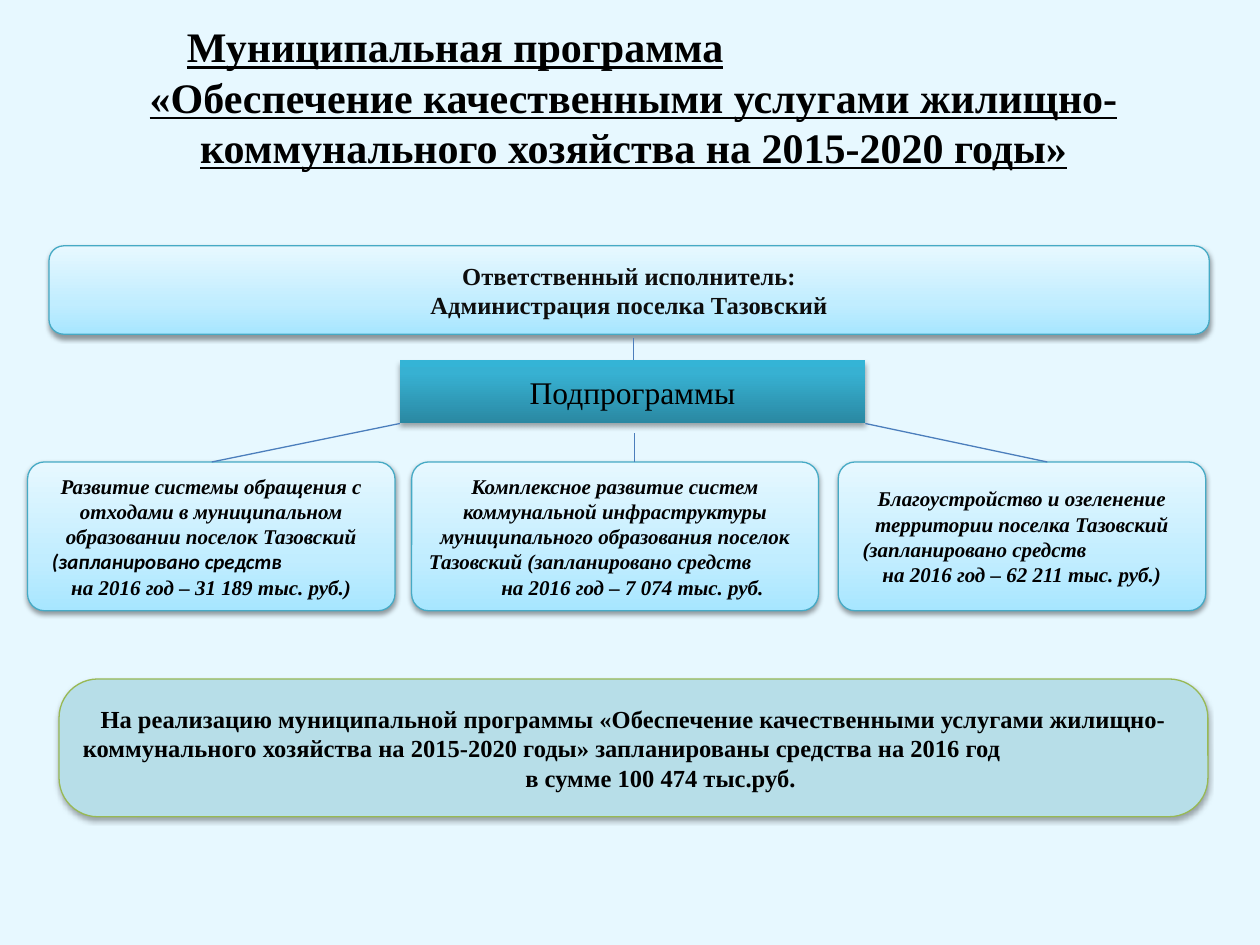
from copy import deepcopy
from dataclasses import dataclass

from lxml import etree
from pptx import Presentation
from pptx.dml.color import RGBColor
from pptx.enum.shapes import MSO_CONNECTOR, MSO_SHAPE
from pptx.enum.text import MSO_ANCHOR, MSO_AUTO_SIZE, PP_ALIGN
from pptx.oxml.ns import qn
from pptx.util import Pt

ROUNDED = MSO_SHAPE.ROUNDED_RECTANGLE
STRAIGHT = MSO_CONNECTOR.STRAIGHT
MIDDLE = MSO_ANCHOR.MIDDLE
NO_AUTOFIT = MSO_AUTO_SIZE.NONE
LEFT, CENTER = PP_ALIGN.LEFT, PP_ALIGN.CENTER

SERIF, SANS = "Times New Roman", "Calibri"
COLORS = {
    "background": "E7F8FF",
    "black": "000000",
    "executor text": "0D0D0D",
    "box line": "46AAC5",
    "connector": "4B7EBC",
    "total fill": "B7DEE8",
    "total line": "98B955",
}
PALE_GRADIENT = ((0, "A7E6FF"), (0.35, "C1EDFF"), (1, "E7F8FF"))
TEAL_GRADIENT = ((0, "2A88A2"), (0.8, "37B1D2"), (1, "34B4D6"))


@dataclass
class Line:
    text: str
    align: PP_ALIGN = CENTER
    indent: float = 0
    font: str = SERIF
    tab: float = 0


@dataclass
class Style:
    size: float
    color: str = COLORS["black"]
    bold: bool = True
    italic: bool = False
    underline: bool = False


@dataclass
class Box:
    left: float
    top: float
    width: float
    height: float
    lines: list[Line]
    style: Style
    corner: float = 0.167
    gradient: tuple = PALE_GRADIENT
    fill: str = ""
    border: str = COLORS["box line"]
    shadow_opacity: int = 38
    shadow_distance: float = 1.6


def write_lines(frame, lines: list[Line], style: Style) -> None:
    frame.word_wrap = True
    frame.auto_size = NO_AUTOFIT
    frame.vertical_anchor = MIDDLE
    for index, line in enumerate(lines):
        paragraph = frame.paragraphs[0] if index == 0 else frame.add_paragraph()
        paragraph.text = line.text
        paragraph.alignment = line.align
        properties = paragraph._p.get_or_add_pPr()
        properties.set("marL", str(Pt(line.indent)))
        properties.set("indent", "0")
        if line.tab:
            tabs = etree.Element(qn("a:tabLst"))
            etree.SubElement(tabs, qn("a:tab"), pos=str(Pt(line.tab)), algn="l")
            properties.insert(0, tabs)
        font = paragraph.font
        font.name, font.size = line.font, Pt(style.size)
        font.bold, font.italic = style.bold, style.italic
        font.underline = style.underline
        font.color.rgb = RGBColor.from_string(style.color)


def fill_gradient(shape, stops: tuple) -> None:
    shape.fill.gradient()
    shape.fill.gradient_angle = 90
    stop_list = shape._element.spPr.find(".//" + qn("a:gsLst"))
    stop_list.append(deepcopy(stop_list[-1]))
    for stop, (position, color) in zip(shape.fill.gradient_stops, stops):
        stop.position = position
        stop.color.rgb = RGBColor.from_string(color)


def add_shadow(shape, opacity: int, distance: float) -> None:
    shape.shadow.inherit = False
    effects = shape._element.spPr.find(qn("a:effectLst"))
    shadow = etree.SubElement(
        effects, qn("a:outerShdw"), blurRad=str(Pt(3.1)),
        dist=str(Pt(distance)), dir="5400000", rotWithShape="0")
    color = etree.SubElement(shadow, qn("a:srgbClr"), val=COLORS["black"])
    etree.SubElement(color, qn("a:alpha"), val=str(opacity * 1000))


def add_box(slide, box: Box) -> None:
    shape = slide.shapes.add_shape(
        ROUNDED, Pt(box.left), Pt(box.top), Pt(box.width), Pt(box.height))
    shape.adjustments[0] = box.corner
    if box.fill:
        shape.fill.solid()
        shape.fill.fore_color.rgb = RGBColor.from_string(box.fill)
    else:
        fill_gradient(shape, box.gradient)
    if box.border:
        shape.line.color.rgb = RGBColor.from_string(box.border)
        shape.line.width = Pt(0.75)
    else:
        shape.line.fill.background()
    add_shadow(shape, box.shadow_opacity, box.shadow_distance)
    write_lines(shape.text_frame, box.lines, box.style)


def add_line(slide, x1: float, y1: float, x2: float, y2: float) -> None:
    line = slide.shapes.add_connector(STRAIGHT, Pt(x1), Pt(y1), Pt(x2), Pt(y2))
    line.line.color.rgb = RGBColor.from_string(COLORS["connector"])
    line.line.width = Pt(0.75)
    etree.SubElement(line._element.spPr, qn("a:effectLst"))


def main() -> None:
    presentation = Presentation()
    presentation.slide_width, presentation.slide_height = Pt(720), Pt(540)
    slide = presentation.slides.add_slide(presentation.slide_layouts[5])
    slide.background.fill.solid()
    slide.background.fill.fore_color.rgb = RGBColor.from_string(COLORS["background"])

    # Title; the tab carries the underline past the first line
    title = slide.shapes.title
    title.left, title.top, title.width, title.height = Pt(56), Pt(34), Pt(612), Pt(42)
    write_lines(title.text_frame, [
        Line("Муниципальная программа\t", LEFT, 43.5, tab=554),
        Line("«Обеспечение качественными услугами жилищно-коммунального "
             "хозяйства на 2015-2020 годы»"),
    ], Style(24, underline=True))

    # Executor and subprogram heading
    add_box(slide, Box(28, 140.5, 663, 50.5, [
        Line("Ответственный исполнитель:"),
        Line("Администрация поселка Тазовский"),
    ], Style(14, COLORS["executor text"])))
    add_box(slide, Box(228.5, 206, 266, 36, [Line("Подпрограммы")],
                       Style(18, bold=False), corner=0, gradient=TEAL_GRADIENT,
                       border="", shadow_opacity=35, shadow_distance=1.8))

    # Subprograms
    subprograms = [
        (15.75, 210, [
            Line("Развитие системы обращения с отходами в муниципальном "
                 "образовании поселок Тазовский"),
            Line("(запланировано средств", LEFT, 4, SANS),
            Line("на 2016 год – 31 189 тыс. руб.)")]),
        (235.25, 232.5, [
            Line("Комплексное развитие систем коммунальной инфраструктуры "
                 "муниципального образования поселок"),
            Line("Тазовский (запланировано средств", LEFT),
            Line("на 2016 год – 7 074 тыс. руб.", indent=20)]),
        (479, 210, [
            Line("Благоустройство и озеленение территории поселка Тазовский"),
            Line("(запланировано средств", LEFT, 4),
            Line("на 2016 год – 62 211 тыс. руб.)")]),
    ]
    for left, width, lines in subprograms:
        add_box(slide, Box(left, 264, width, 85, lines,
                           Style(12, italic=True), corner=0.114))

    # Total funding
    add_box(slide, Box(33.75, 388, 656.5, 78.75, [
        Line("На реализацию муниципальной программы «Обеспечение "
             "качественными услугами жилищно-"),
        Line("коммунального хозяйства на 2015-2020 годы» запланированы "
             "средства на 2016 год", LEFT),
        Line("в сумме 100 474 тыс.руб.", indent=31),
    ], Style(14), corner=0.282, fill=COLORS["total fill"],
        border=COLORS["total line"], shadow_opacity=35, shadow_distance=1.8))

    # Connectors
    add_line(slide, 362, 193, 362, 206)
    add_line(slide, 228.5, 242, 121, 264)
    add_line(slide, 494.5, 242, 598.5, 264)
    add_line(slide, 362.75, 247.5, 362.75, 264)

    presentation.save("out.pptx")


if __name__ == "__main__":
    main()
